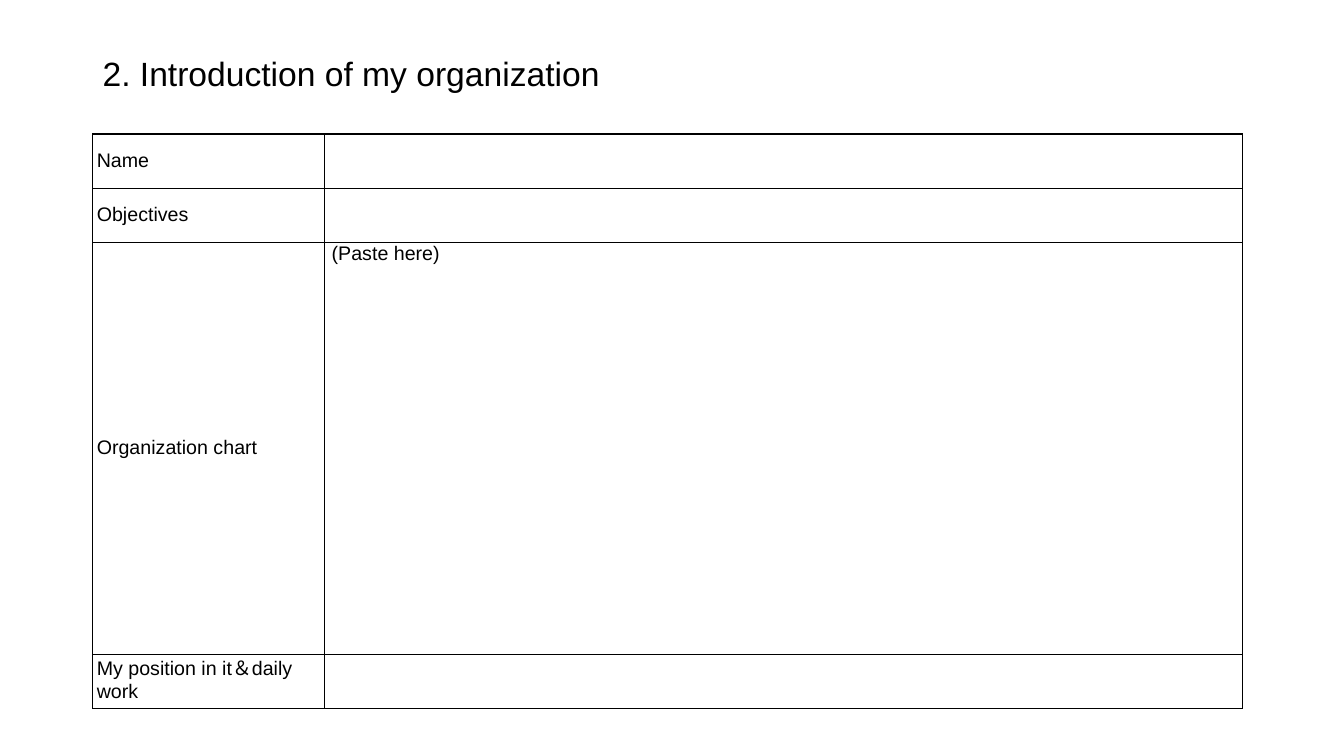
"""Build the slide that introduces an organization through a form table."""
from lxml import etree
from pptx import Presentation
from pptx.dml.color import RGBColor
from pptx.enum.text import MSO_ANCHOR, PP_ALIGN
from pptx.oxml.ns import qn
from pptx.util import Inches, Pt

BLACK = RGBColor(0, 0, 0)
FONT = "Arial"
MIDDLE = MSO_ANCHOR.MIDDLE
TOP = MSO_ANCHOR.TOP
JUSTIFY = PP_ALIGN.JUSTIFY
LEFT = PP_ALIGN.LEFT

PAGE_WIDTH, PAGE_HEIGHT = 13.33, 7.5
MARGIN = 0.92
TABLE_TOP = 1.33
COLUMNS = (2.3, 9.1)
SHORT_ROW, CHART_ROW = 0.54, 4.08
FORM = (
    ("Name", "", SHORT_ROW),
    ("Objectives", "", SHORT_ROW),
    ("Organization chart", "(Paste here)", CHART_ROW),
    ("My position in it＆daily work", "", SHORT_ROW),
)


def write_text(frame, text, size=14, spacing=None, align=LEFT):
    """Write one formatted paragraph into a text frame."""
    frame.word_wrap = True
    para = frame.paragraphs[0]
    para.alignment = align
    if spacing:
        para.line_spacing = spacing
    para.font.size = Pt(size)
    if text:
        span = para.add_run()
        span.text = text
        span.font.name = FONT
        span.font.size = Pt(size)
        span.font.color.rgb = BLACK


def add_title(page, text):
    """Add the slide title above the table."""
    box = page.shapes.add_textbox(
        Inches(MARGIN), Inches(0.4), Inches(11.5), Inches(0.69))
    box.text_frame.vertical_anchor = MIDDLE
    write_text(box.text_frame, text, size=24, spacing=0.9)


def add_borders(cell, width=1):
    """Draw a black line on all four sides of a cell."""
    properties = cell._tc.get_or_add_tcPr()
    for side in ("lnL", "lnR", "lnT", "lnB"):
        line = etree.SubElement(properties, qn(f"a:{side}"), w=str(Pt(width)))
        fill = etree.SubElement(line, qn("a:solidFill"))
        etree.SubElement(fill, qn("a:srgbClr"), val=str(BLACK))


def fill_cell(cell, text, anchor=TOP, inset=0.07, **text_format):
    """Set the text, margins, borders and empty fill of a cell."""
    cell.margin_left = cell.margin_right = Inches(inset)
    cell.margin_top = cell.margin_bottom = 0
    cell.vertical_anchor = anchor
    write_text(cell.text_frame, text, **text_format)
    add_borders(cell)
    cell.fill.background()


def add_form(page):
    """Add the table of labels and answer fields."""
    height = sum(row_height for _, _, row_height in FORM)
    table = page.shapes.add_table(
        len(FORM), len(COLUMNS), Inches(MARGIN), Inches(TABLE_TOP),
        Inches(sum(COLUMNS)), Inches(height)).table
    table.first_row = table.horz_banding = False
    for column, width in zip(table.columns, COLUMNS):
        column.width = Inches(width)
    for row, (label, answer, row_height) in zip(table.rows, FORM):
        row.height = Inches(row_height)
        label_cell, answer_cell = row.cells
        fill_cell(label_cell, label, anchor=MIDDLE, inset=0.04, spacing=Pt(15))
        fill_cell(answer_cell, answer, align=JUSTIFY)


def main():
    """Build and save the deck."""
    deck = Presentation()
    deck.slide_width, deck.slide_height = Inches(PAGE_WIDTH), Inches(PAGE_HEIGHT)
    page = deck.slides.add_slide(deck.slide_layouts[6])
    add_title(page, "2. Introduction of my organization")
    add_form(page)
    deck.save("out.pptx")


if __name__ == "__main__":
    main()
